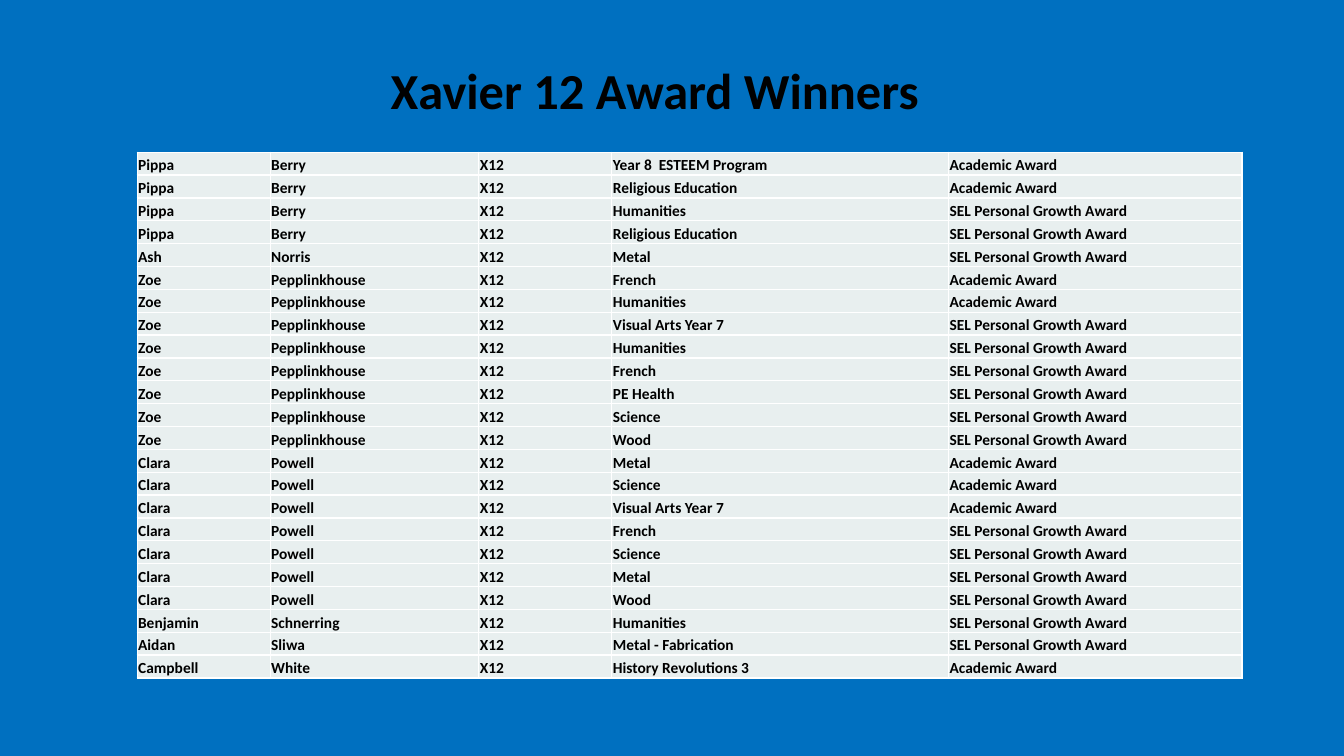
from lxml.etree import fromstring
from pptx import Presentation
from pptx.dml.color import RGBColor
from pptx.enum.text import MSO_ANCHOR, MSO_AUTO_SIZE, PP_ALIGN
from pptx.oxml.ns import nsdecls
from pptx.util import Inches, Pt

TITLE = "Xavier 12 Award Winners"
HOME_GROUP = "X12"
ACADEMIC = "Academic Award"
GROWTH = "SEL Personal Growth Award"
WINNERS = [
    ("Pippa", "Berry", [
        ("Year 8  ESTEEM Program", ACADEMIC),
        ("Religious Education", ACADEMIC),
        ("Humanities", GROWTH),
        ("Religious Education", GROWTH),
    ]),
    ("Ash", "Norris", [("Metal", GROWTH)]),
    ("Zoe", "Pepplinkhouse", [
        ("French", ACADEMIC),
        ("Humanities", ACADEMIC),
        ("Visual Arts Year 7", GROWTH),
        ("Humanities", GROWTH),
        ("French", GROWTH),
        ("PE Health", GROWTH),
        ("Science", GROWTH),
        ("Wood", GROWTH),
    ]),
    ("Clara", "Powell", [
        ("Metal", ACADEMIC),
        ("Science", ACADEMIC),
        ("Visual Arts Year 7", ACADEMIC),
        ("French", GROWTH),
        ("Science", GROWTH),
        ("Metal", GROWTH),
        ("Wood", GROWTH),
    ]),
    ("Benjamin", "Schnerring", [("Humanities", GROWTH)]),
    ("Aidan", "Sliwa", [("Metal - Fabrication", GROWTH)]),
    ("Campbell", "White", [("History Revolutions 3", ACADEMIC)]),
]
COLUMN_WIDTHS = [1.32, 2.07, 1.32, 3.34, 2.91]
TABLE_HEIGHT = 5.22
FONT = "Calibri"
BLUE = RGBColor(0x00, 0x70, 0xC0)
PALE = RGBColor(0xE8, 0xEF, 0xEF)
BLACK = RGBColor(0x00, 0x00, 0x00)
WHITE = RGBColor(0xFF, 0xFF, 0xFF)


def format_text(paragraph, size):
    """Apply the bold black type shared by the title and table."""
    font = paragraph.font
    font.name, font.size, font.bold = FONT, Pt(size), True
    font.color.rgb = BLACK


def add_title(slide):
    """Place and format the slide title."""
    title = slide.shapes.title
    title.left, title.top = Inches(0.67), Inches(0.6)
    title.width, title.height = Inches(11.65), Inches(1.24)
    frame = title.text_frame
    frame.text = TITLE
    frame.vertical_anchor = MSO_ANCHOR.TOP
    frame.auto_size = MSO_AUTO_SIZE.NONE
    paragraph = frame.paragraphs[0]
    paragraph.alignment = PP_ALIGN.CENTER
    paragraph.line_spacing = 0.9
    format_text(paragraph, 36)


def fill_cell(cell, text):
    """Write one cell with its fill, margins and white borders."""
    cell.text = text
    cell.vertical_anchor = MSO_ANCHOR.BOTTOM
    cell.margin_left = cell.margin_right = cell.margin_top = Inches(0.01)
    cell.margin_bottom = 0
    cell.fill.solid()
    cell.fill.fore_color.rgb = PALE
    format_text(cell.text_frame.paragraphs[0], 11)
    properties = cell._tc.get_or_add_tcPr()
    for position, side in enumerate("LRTB"):
        border = fromstring(
            f'<a:ln{side} {nsdecls("a")} w="{Pt(1)}"><a:solidFill>'
            f'<a:srgbClr val="{WHITE}"/></a:solidFill></a:ln{side}>')
        properties.insert(position, border)


def add_awards_table(slide):
    """Add one row for each award."""
    rows = [(first, last, HOME_GROUP, subject, award)
            for first, last, awards in WINNERS for subject, award in awards]
    table = slide.shapes.add_table(
        len(rows), len(COLUMN_WIDTHS), Inches(1.36), Inches(1.51),
        Inches(sum(COLUMN_WIDTHS)), Inches(TABLE_HEIGHT)).table
    table.first_row = table.horz_banding = False
    for column, width in zip(table.columns, COLUMN_WIDTHS):
        column.width = Inches(width)
    for row, texts in zip(table.rows, rows):
        row.height = Inches(TABLE_HEIGHT / len(rows))
        for cell, text in zip(row.cells, texts):
            fill_cell(cell, text)


def main():
    """Build the award winners slide."""
    presentation = Presentation()
    presentation.slide_width = Inches(13.33)
    presentation.slide_height = Inches(7.5)
    slide = presentation.slides.add_slide(presentation.slide_layouts[5])
    slide.background.fill.solid()
    slide.background.fill.fore_color.rgb = BLUE
    add_title(slide)
    add_awards_table(slide)
    presentation.save("out.pptx")


if __name__ == "__main__":
    main()
